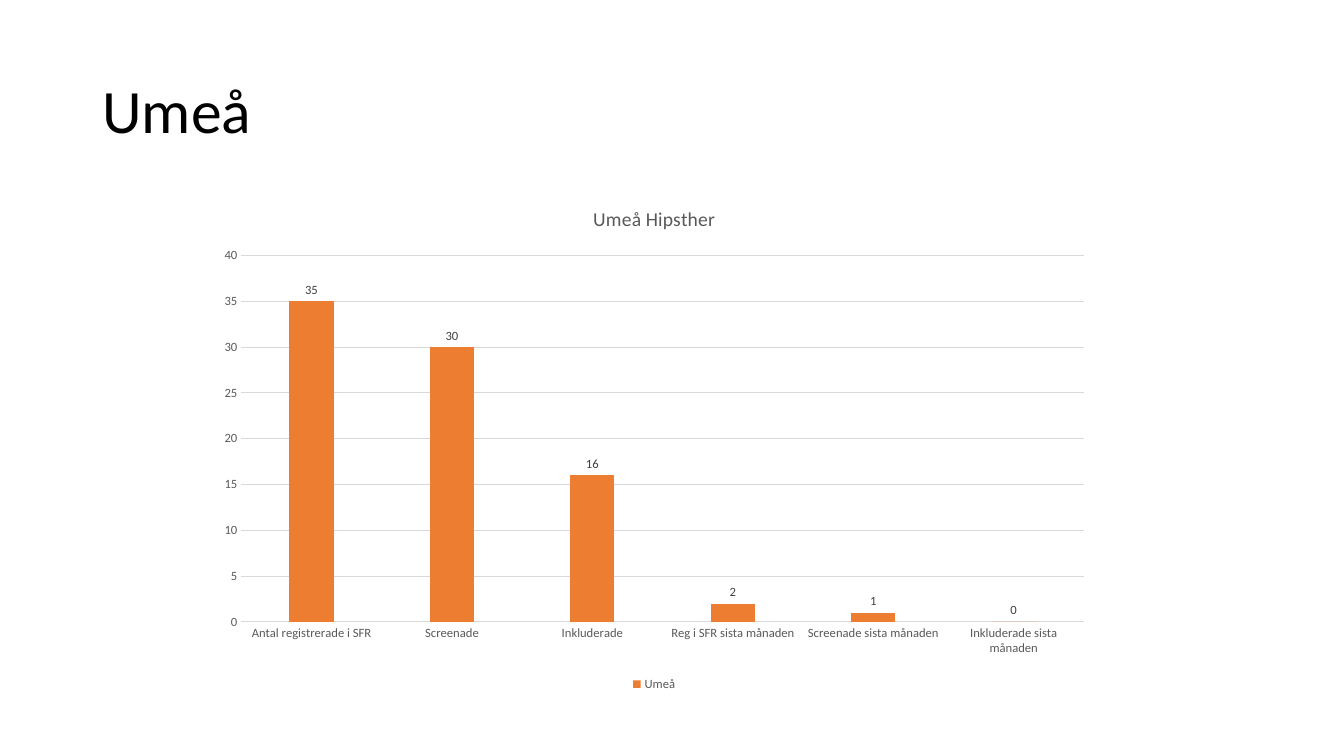
from pptx import Presentation
from pptx.chart.data import CategoryChartData
from pptx.dml.color import RGBColor
from pptx.enum.chart import (XL_CHART_TYPE, XL_LABEL_POSITION,
                             XL_LEGEND_POSITION, XL_TICK_MARK)
from pptx.enum.text import MSO_ANCHOR, PP_ALIGN
from pptx.util import Pt

COLUMNS = XL_CHART_TYPE.COLUMN_CLUSTERED
OUTSIDE = XL_LABEL_POSITION.OUTSIDE_END
BOTTOM = XL_LEGEND_POSITION.BOTTOM
NO_TICK = XL_TICK_MARK.NONE
MIDDLE = MSO_ANCHOR.MIDDLE
LEFT = PP_ALIGN.LEFT

# Content
TITLE = "Umeå"
CHART_TITLE = "Umeå Hipsther"
SERIES = "Umeå"
COUNTS = {
    "Antal registrerade i SFR": 35,
    "Screenade": 30,
    "Inkluderade": 16,
    "Reg i SFR sista månaden": 2,
    "Screenade sista månaden": 1,
    "Inkluderade sista månaden": 0,
}

# Style and places (left, top, width, height in points)
FONT = "Calibri"
BLACK, GREY, DARK, RULE, ORANGE = "000000", "595959", "404040", "D9D9D9", "ED7D31"
TITLE_BOX = (66, 28.75, 828, 104.4)
CHART_BOX = (147.6, 133.2, 639.4, 363.6)


def rgb(value):
    return RGBColor.from_string(value)


def set_font(font, size, color):
    font.name, font.size, font.bold = FONT, Pt(size), False
    font.color.rgb = rgb(color)


def set_line(fmt):
    fmt.line.color.rgb = rgb(RULE)
    fmt.line.width = Pt(0.75)


prs = Presentation()
prs.slide_width, prs.slide_height = Pt(960), Pt(540)
s = prs.slides.add_slide(prs.slide_layouts[5])

# Slide title
title = s.shapes.title
title.left, title.top, title.width, title.height = map(Pt, TITLE_BOX)
tf = title.text_frame
tf.vertical_anchor = MIDDLE
p = tf.paragraphs[0]
p.alignment, p.line_spacing = LEFT, 0.9
r = p.add_run()
r.text = TITLE
set_font(r.font, 44, BLACK)

# Chart
data = CategoryChartData(number_format="General")
data.categories = list(COUNTS)
data.add_series(SERIES, list(COUNTS.values()))
chart = s.shapes.add_chart(COLUMNS, *map(Pt, CHART_BOX), data).chart
set_font(chart.font, 10, BLACK)

# Chart title
p = chart.chart_title.text_frame.paragraphs[0]
r = p.add_run()
r.text = CHART_TITLE
set_font(r.font, 14, GREY)
chart.chart_title.include_in_layout = False

# Columns and their labels
plot = chart.plots[0]
plot.gap_width, plot.overlap, plot.vary_by_categories = 219, -27, False
fill = plot.series[0].format.fill
fill.solid()
fill.fore_color.rgb = rgb(ORANGE)
labels = plot.series[0].data_labels
labels.show_value, labels.position = True, OUTSIDE
set_font(labels.font, 9, DARK)

# Axes
for axis in (chart.category_axis, chart.value_axis):
    axis.major_tick_mark = axis.minor_tick_mark = NO_TICK
    set_font(axis.tick_labels.font, 9, GREY)
set_line(chart.category_axis.format)
values = chart.value_axis
values.minimum_scale, values.maximum_scale, values.major_unit = 0, 40, 5
values.format.line.fill.background()
set_line(values.major_gridlines.format)

# Legend
chart.has_legend = True
chart.legend.position = BOTTOM
chart.legend.include_in_layout = False
set_font(chart.legend.font, 9, GREY)

prs.save("out.pptx")
